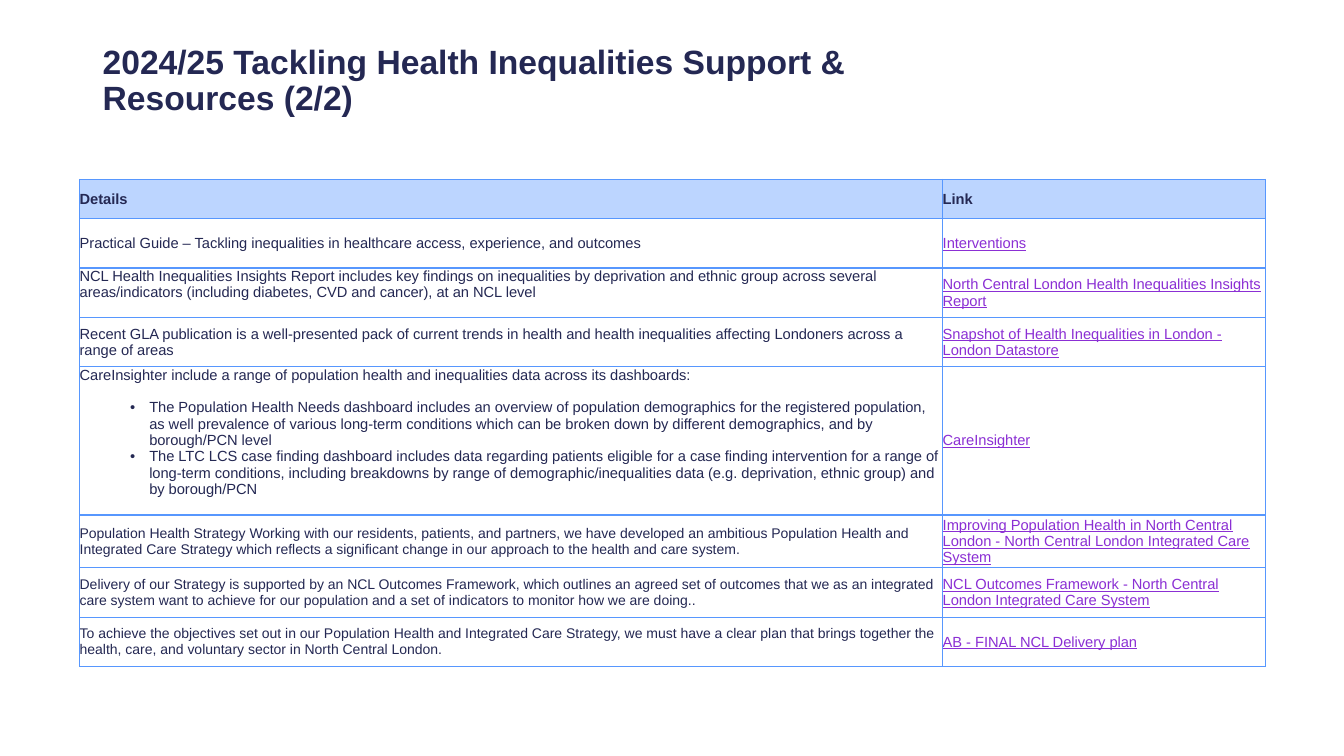
from dataclasses import dataclass

from lxml import etree
from pptx import Presentation
from pptx import util as u
from pptx.dml.color import RGBColor
from pptx.enum import text
from pptx.oxml import ns

NAVY = RGBColor(0x24, 0x28, 0x53)
PURPLE = RGBColor(0x8B, 0x2F, 0xD4)
HEADER_BLUE = RGBColor(0xBC, 0xD5, 0xFF)
BORDER_BLUE = RGBColor(0x57, 0x97, 0xFE)
FONT = "Arial"


@dataclass
class Resource:
    details: str
    link: str
    size: float = 10.5
    height: float = 0.49
    anchor: text.MSO_ANCHOR = text.MSO_ANCHOR.MIDDLE
    bullets: tuple[str, ...] = ()


RESOURCES = [
    Resource("Practical Guide – Tackling inequalities in healthcare access, experience, and outcomes",
             "Interventions"),
    Resource("NCL Health Inequalities Insights Report includes key findings on inequalities by "
             "deprivation and ethnic group across several areas/indicators (including diabetes, "
             "CVD and cancer), at an NCL level",
             "North Central London Health Inequalities Insights Report",
             anchor=text.MSO_ANCHOR.TOP),
    Resource("Recent GLA publication is a well-presented pack of current trends in health and "
             "health inequalities affecting Londoners across a range of areas",
             "Snapshot of Health Inequalities in London - London Datastore"),
    Resource("CareInsighter include a range of population health and inequalities data across "
             "its dashboards:",
             "CareInsighter", height=1.47, anchor=text.MSO_ANCHOR.TOP,
             bullets=(
                 "The Population Health Needs dashboard includes an overview of population "
                 "demographics for the registered population, as well prevalence of various "
                 "long-term conditions which can be broken down by different demographics, and "
                 "by borough/PCN level",
                 "The LTC LCS case finding dashboard includes data regarding patients eligible "
                 "for a case finding intervention for a range of long-term conditions, including "
                 "breakdowns by range of demographic/inequalities data (e.g. deprivation, ethnic "
                 "group) and by borough/PCN")),
    Resource("Population Health Strategy Working with our residents, patients, and partners, we "
             "have developed an ambitious Population Health and Integrated Care Strategy which "
             "reflects a significant change in our approach to the health and care system.",
             "Improving Population Health in North Central London - North Central London "
             "Integrated Care System", size=10),
    Resource("Delivery of our Strategy is supported by an NCL Outcomes Framework, which outlines "
             "an agreed set of outcomes that we as an integrated care system want to achieve for "
             "our population and a set of indicators to monitor how we are doing..",
             "NCL Outcomes Framework - North Central London Integrated Care System", size=10),
    Resource("To achieve the objectives set out in our Population Health and Integrated Care "
             "Strategy, we must have a clear plan that brings together the health, care, and "
             "voluntary sector in North Central London.",
             "AB - FINAL NCL Delivery plan", size=10),
]


def style(p, size: float, color: RGBColor = NAVY, bold: bool = False,
          underline: bool = False) -> None:
    p.font.name = FONT
    p.font.size = u.Pt(size)
    p.font.color.rgb = color
    p.font.bold = bold
    p.font.underline = underline


def prepare_cell(cell, anchor: text.MSO_ANCHOR = text.MSO_ANCHOR.MIDDLE,
                 fill: RGBColor | None = None) -> None:
    cell.margin_left = cell.margin_right = cell.margin_top = cell.margin_bottom = 0
    cell.vertical_anchor = anchor
    tc_pr = cell._tc.get_or_add_tcPr()
    for side in ("a:lnL", "a:lnR", "a:lnT", "a:lnB"):
        ln = etree.SubElement(tc_pr, ns.qn(side), w=str(u.Pt(1)))
        solid = etree.SubElement(ln, ns.qn("a:solidFill"))
        etree.SubElement(solid, ns.qn("a:srgbClr"), val=str(BORDER_BLUE))
    if fill is None:
        cell.fill.background()
    else:
        cell.fill.solid()
        cell.fill.fore_color.rgb = fill


def add_bullet(tf, words: str, size: float, space_before: float) -> None:
    p = tf.add_paragraph()
    p.text = words
    p.level = 1
    p_pr = p._p.get_or_add_pPr()
    p_pr.set("marL", str(u.Inches(0.69)))
    p_pr.set("indent", str(u.Inches(-0.19)))
    etree.SubElement(p_pr, ns.qn("a:buFont"), typeface=FONT)
    etree.SubElement(p_pr, ns.qn("a:buChar"), char="•")
    p.space_before = u.Pt(space_before)
    style(p, size)


def add_title(slide) -> None:
    box = slide.shapes.add_textbox(u.Inches(0.92), u.Inches(0.4), u.Inches(8.22), u.Inches(1.45))
    tf = box.text_frame
    tf.word_wrap = True
    p = tf.paragraphs[0]
    p.text = "2024/25 Tackling Health Inequalities Support & Resources (2/2)"
    p.line_spacing = 0.9
    style(p, 24, bold=True)


def add_resource_table(slide) -> None:
    heights = [0.39] + [res.height for res in RESOURCES]
    table = slide.shapes.add_table(len(heights), 2, u.Inches(0.79), u.Inches(1.78),
                                   u.Inches(11.76), u.Inches(sum(heights))).table
    table.first_row = True
    table.horz_banding = False
    for column, width in zip(table.columns, (8.56, 3.2)):
        column.width = u.Inches(width)
    for row, height in zip(table.rows, heights):
        row.height = u.Inches(height)

    # Header row
    for cell, heading in zip(table.rows[0].cells, ("Details", "Link")):
        prepare_cell(cell, fill=HEADER_BLUE)
        cell.text = heading
        style(cell.text_frame.paragraphs[0], 10.5, bold=True)

    # One row per resource
    for i, res in enumerate(RESOURCES, start=1):
        details, link = table.cell(i, 0), table.cell(i, 1)
        prepare_cell(details, res.anchor)
        details.text = res.details
        style(details.text_frame.paragraphs[0], res.size)
        for n, bullet in enumerate(res.bullets):
            add_bullet(details.text_frame, bullet, res.size, 0 if n else 11.7)
        prepare_cell(link)
        link.text = res.link
        style(link.text_frame.paragraphs[0], 10.5, PURPLE, underline=True)


def main() -> None:
    prs = Presentation()
    prs.slide_width, prs.slide_height = u.Inches(13.33), u.Inches(7.5)
    slide = prs.slides.add_slide(prs.slide_layouts[6])
    add_title(slide)
    add_resource_table(slide)
    prs.save("out.pptx")


if __name__ == "__main__":
    main()
